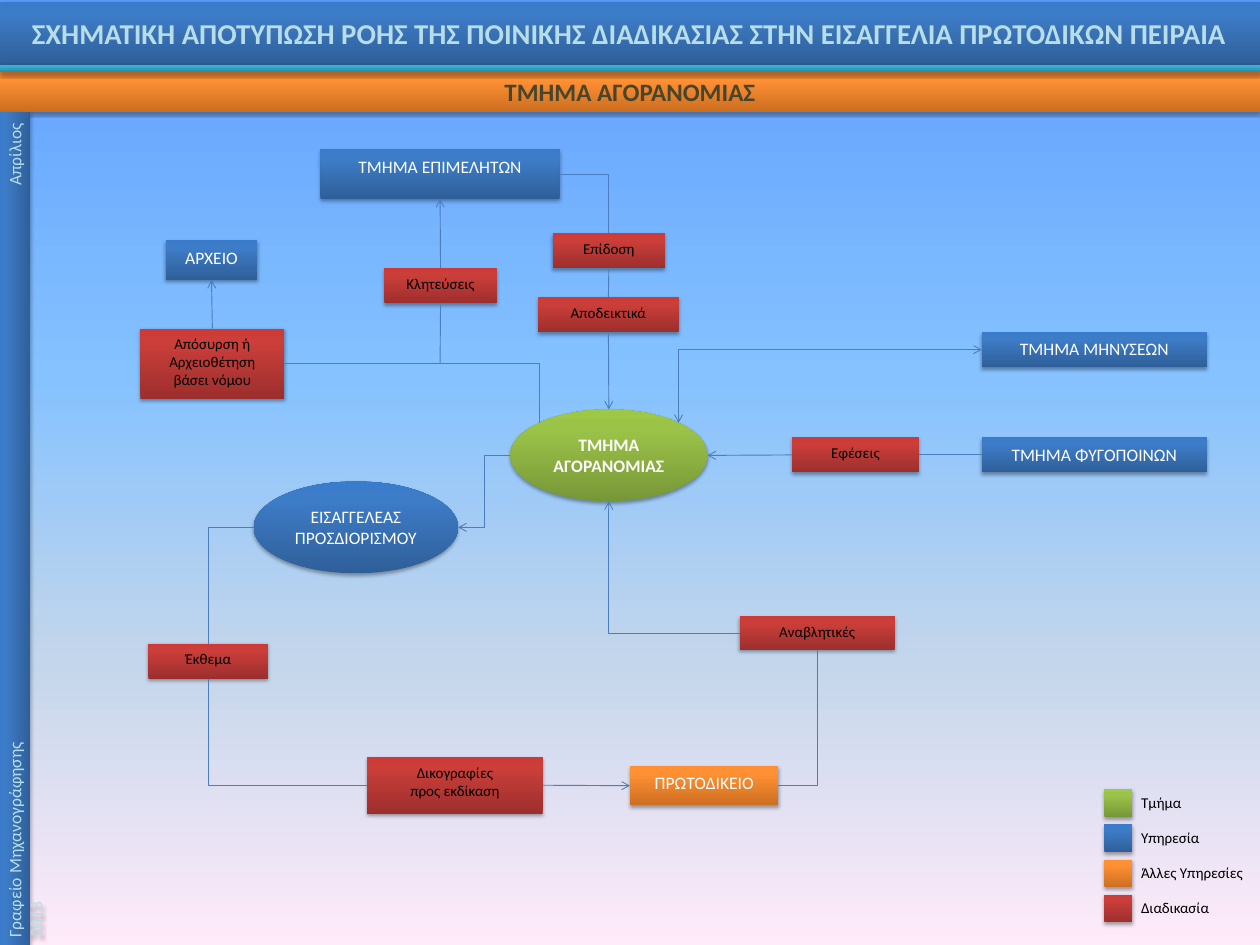
from lxml import etree
from pptx import Presentation
from pptx.dml.color import RGBColor
from pptx.enum.shapes import MSO_CONNECTOR, MSO_SHAPE
from pptx.enum.text import MSO_ANCHOR, MSO_AUTO_SIZE, PP_ALIGN
from pptx.oxml.ns import qn
from pptx.util import Inches, Pt

RECT, OVAL = MSO_SHAPE.RECTANGLE, MSO_SHAPE.OVAL
STRAIGHT, ELBOW = MSO_CONNECTOR.STRAIGHT, MSO_CONNECTOR.ELBOW
TOP, MIDDLE = MSO_ANCHOR.TOP, MSO_ANCHOR.MIDDLE
LEFT, CENTER = PP_ALIGN.LEFT, PP_ALIGN.CENTER
UP, WEST, DOWN, EAST = range(4)

WHITE = RGBColor(0xFF, 0xFF, 0xFF)
BLACK = RGBColor(0, 0, 0)
PALE = RGBColor(0xB7, 0xDE, 0xE8)
BROWN = RGBColor(0x4A, 0x45, 0x2A)
WIRE = RGBColor(0x4B, 0x7E, 0xBC)


def ramp(*stops):
    return [(at, RGBColor.from_string(tint)) for at, tint in stops]


GREEN = ramp((0, "779737"), (80, "9BC348"), (100, "9DC746"))
ORANGE = ramp((0, "CC6E20"), (80, "FF9034"), (100, "FF9136"))
BLUE = ramp((0, "2F5F99"), (80, "3D7CC7"), (100, "3A7CCB"))
RED = ramp((0, "9C2F2D"), (80, "CB3E3A"), (100, "CE3B37"))
TEAL = ramp((0, "2A88A2"), (80, "37B1D2"), (100, "34B4D6"))
SKY = ramp((0, "5E9EFF"), (40, "85C2FF"), (70, "C4D6EB"), (100, "FFEBFA"))


def node(parent, tag, **attrs):
    return etree.SubElement(parent, qn(tag), {k: str(v) for k, v in attrs.items()})


class Chart:
    """Flow chart style and the slide it is drawn on."""
    face = "Calibri"
    wide = (0.14, 0.07)
    slim = (0.1, 0.05)

    def __init__(self, deck):
        self.slide = deck.slides.add_slide(deck.slide_layouts[5])
        self.blend(self.slide.background.fill, self.slide.element, SKY, 270)

    def blend(self, fill, root, stops, angle=90):
        fill.gradient()
        fill.gradient_angle = angle
        group = next(root.iter(qn("a:gsLst")))
        group.clear()
        for at, tint in stops:
            node(node(group, "a:gs", pos=at * 1000), "a:srgbClr", val=tint)

    def paint(self, shape, stops):
        self.blend(shape.fill, shape.element, stops)
        shape.line.fill.background()
        shape.shadow.inherit = False
        glow = node(shape.element.spPr.find(qn("a:effectLst")), "a:outerShdw",
                    blurRad=Pt(3.1), dist=Pt(1.8), dir=5400000, rotWithShape=0)
        node(node(glow, "a:srgbClr", val="000000"), "a:alpha", val=35000)

    def letter(self, shape, text, size, color, bold=False, anchor=TOP,
               align=CENTER, pad=wide, tab=None):
        frame = shape.text_frame
        frame.text = text
        frame.word_wrap = True
        frame.auto_size = MSO_AUTO_SIZE.NONE
        frame.vertical_anchor = anchor
        frame.margin_left = frame.margin_right = Inches(pad[0])
        frame.margin_top = frame.margin_bottom = Inches(pad[1])
        for para in frame.paragraphs:
            para.alignment = align
            if tab:
                stops = node(para._p.get_or_add_pPr(), "a:tabLst")
                node(stops, "a:tab", pos=Inches(tab), algn="r")
            font = para.font
            font.name, font.size, font.bold = self.face, Pt(size), bold
            font.color.rgb = color

    def title(self, text, x, y, w, h):
        shape = self.slide.shapes.title
        shape.left, shape.top, shape.width, shape.height = map(Inches, (x, y, w, h))
        self.paint(shape, BLUE)
        self.letter(shape, text, 23, PALE, True, MIDDLE)

    def shape(self, x, y, w, h, stops, kind=RECT):
        shape = self.slide.shapes.add_shape(kind, *map(Inches, (x, y, w, h)))
        self.paint(shape, stops)
        return shape

    def unit(self, text, x, y, w, h, stops=BLUE):
        shape = self.shape(x, y, w, h, stops)
        self.letter(shape, text, 14, WHITE)
        return shape

    def task(self, text, x, y, w, h=0.39):
        shape = self.shape(x, y, w, h, RED)
        self.letter(shape, text, 12, BLACK)
        return shape

    def oval(self, text, x, y, w, h, stops, bold=False):
        shape = self.shape(x, y, w, h, stops, OVAL)
        self.letter(shape, text, 14, WHITE, bold, MIDDLE, pad=self.slim)
        return shape

    def label(self, text, x, y, w, h):
        box = self.slide.shapes.add_textbox(*map(Inches, (x, y, w, h)))
        self.letter(box, text, 12, BLACK, align=LEFT, pad=self.slim)

    def spot(self, end):
        """Point for an end given as (x, y) in inches or (shape, side)."""
        if not hasattr(end[0], "left"):
            return Inches(end[0]), Inches(end[1])
        box, side = end
        dx, dy = ((0.5, 0), (0, 0.5), (0.5, 1), (1, 0.5))[side]
        return int(box.left + dx * box.width), int(box.top + dy * box.height)

    def wire(self, start, end, kind=STRAIGHT, preset=None, head=False, tail=False):
        link = self.slide.shapes.add_connector(kind, *self.spot(start), *self.spot(end))
        for (box, side), join in ((start, link.begin_connect), (end, link.end_connect)):
            if hasattr(box, "left") and box.auto_shape_type == RECT:
                join(box, side)
        link.line.color.rgb = WIRE
        link.line.width = Pt(0.75)
        props = link.element.spPr
        if preset:
            props.find(qn("a:prstGeom")).set("prst", preset)
        line = props.find(qn("a:ln"))
        for on, tag in ((head, "a:headEnd"), (tail, "a:tailEnd")):
            if on:
                node(line, tag, type="arrow")
        node(props, "a:effectLst")

    def bend(self, start, end, **tips):
        """One corner: sideways from start, then up or down to end."""
        self.wire(start, end, ELBOW, "bentConnector2", **tips)


def main():
    deck = Presentation()
    deck.slide_width, deck.slide_height = Inches(14), Inches(10.5)
    c = Chart(deck)

    # Header bands and side strip
    c.title("ΣΧΗΜΑΤΙΚΗ ΑΠΟΤΥΠΩΣΗ ΡΟΗΣ ΤΗΣ ΠΟΙΝΙΚΗΣ ΔΙΑΔΙΚΑΣΙΑΣ ΣΤΗΝ ΕΙΣΑΓΓΕΛΙΑ "
            "ΠΡΩΤΟΔΙΚΩΝ ΠΕΙΡΑΙΑ", 0, 0.02, 14, 0.7)
    band = c.shape(0, 0.8, 14, 0.44, ORANGE)
    c.letter(band, "ΤΜΗΜΑ ΑΓΟΡΑΝΟΜΙΑΣ", 20, BROWN, True, pad=c.slim)
    strip = c.shape(-4.47, 5.71, 9.27, 0.34, BLUE)
    strip.rotation = 270
    c.letter(strip, "Γραφείο Μηχανογράφησης\tΑπρίλιος\n2013", 14, PALE,
             align=LEFT, pad=c.slim, tab=9.05)
    c.shape(0, 0.72, 14, 0.08, TEAL)

    # Departments and services
    hub = c.oval("ΤΜΗΜΑ ΑΓΟΡΑΝΟΜΙΑΣ", 5.67, 4.55, 2.19, 1.02, GREEN, True)
    judge = c.oval("ΕΙΣΑΓΓΕΛΕΑΣ ΠΡΟΣΔΙΟΡΙΣΜΟΥ", 2.82, 5.35, 2.27, 1.02, BLUE)
    clerks = c.unit("ΤΜΗΜΑ ΕΠΙΜΕΛΗΤΩΝ", 3.56, 1.66, 2.66, 0.55)
    store = c.unit("ΑΡΧΕΙΟ", 1.84, 2.67, 1.02, 0.44)
    suits = c.unit("ΤΜΗΜΑ ΜΗΝΥΣΕΩΝ", 10.91, 3.69, 2.5, 0.39)
    exiles = c.unit("ΤΜΗΜΑ ΦΥΓΟΠΟΙΝΩΝ", 10.91, 4.86, 2.5, 0.39)
    court = c.unit("ΠΡΩΤΟΔΙΚΕΙΟ", 7, 8.51, 1.65, 0.44, ORANGE)

    # Procedures
    purge = c.task("Απόσυρση ή\nΑρχειοθέτηση\nβάσει νόμου", 1.56, 3.65, 1.6, 0.78)
    calls = c.task("Κλητεύσεις", 4.27, 2.98, 1.25)
    serve = c.task("Επίδοση", 6.14, 2.59, 1.25)
    proof = c.task("Αποδεικτικά", 5.98, 3.3, 1.56)
    pleas = c.task("Εφέσεις", 8.8, 4.86, 1.41)
    delays = c.task("Αναβλητικές", 8.22, 6.85, 1.72, 0.37)
    roll = c.task("Έκθεμα", 1.65, 7.15, 1.33)
    briefs = c.task("Δικογραφίες\nπρος εκδίκαση", 4.08, 8.41, 1.95, 0.63)

    # Straight links
    c.wire((purge, UP), (store, DOWN), tail=True)
    c.wire((calls, UP), (clerks, DOWN), tail=True)
    c.wire((calls, DOWN), (4.89, 4.04))
    c.wire((serve, DOWN), (proof, UP))
    c.wire((proof, DOWN), (hub, UP), tail=True)
    c.wire((pleas, EAST), (exiles, WEST))
    c.wire((pleas, WEST), (hub, EAST), tail=True)
    c.wire((briefs, EAST), (court, WEST), tail=True)

    # Bent links
    c.wire((hub, WEST), (judge, EAST), ELBOW, tail=True)
    c.bend((clerks, EAST), (serve, UP))
    c.bend((purge, EAST), (5.99, 4.7))
    c.bend((suits, WEST), (7.54, 4.7), head=True, tail=True)
    c.bend((judge, WEST), (roll, UP))
    c.bend((briefs, WEST), (roll, DOWN))
    c.bend((court, EAST), (delays, DOWN))
    c.bend((delays, WEST), (hub, DOWN), tail=True)

    # Legend
    keys = (("Τμήμα", GREEN), ("Υπηρεσία", BLUE),
            ("Άλλες Υπηρεσίες", ORANGE), ("Διαδικασία", RED))
    for row, (text, stops) in enumerate(keys):
        y = 8.77 + 0.39 * row
        c.shape(12.27, y, 0.31, 0.31, stops)
        c.label(text, 12.58, y, 1.4, 0.3)

    deck.save("out.pptx")


if __name__ == "__main__":
    main()
